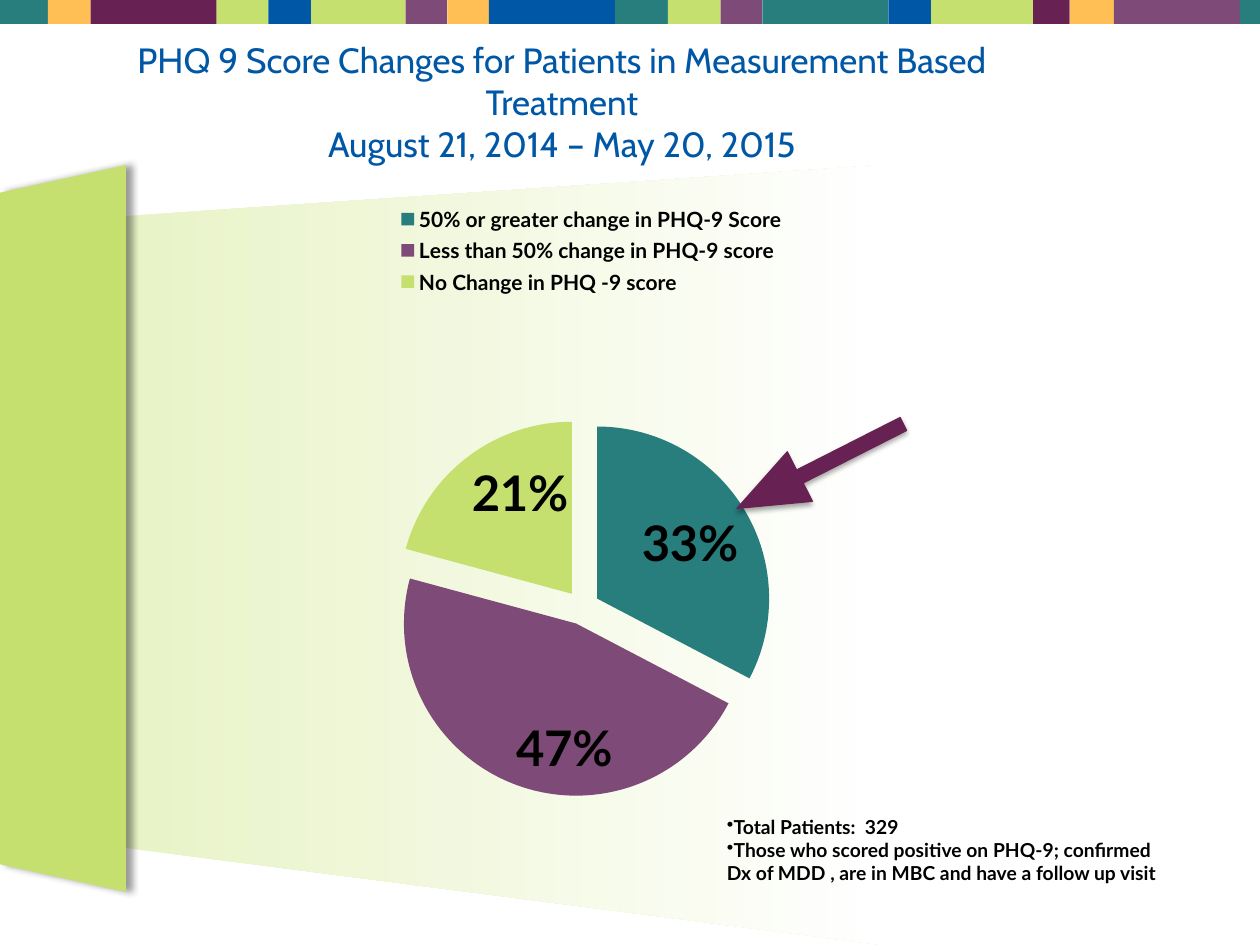
"""Build the PHQ 9 score change slide with its exploded pie chart."""
from lxml import etree
from pptx import Presentation
from pptx.chart.data import CategoryChartData
from pptx.dml.color import RGBColor
from pptx.enum.chart import XL_CHART_TYPE, XL_LABEL_POSITION, XL_LEGEND_POSITION
from pptx.enum.shapes import MSO_SHAPE
from pptx.enum.text import MSO_ANCHOR, MSO_AUTO_SIZE, PP_ALIGN
from pptx.oxml import parse_xml
from pptx.oxml.ns import nsdecls, qn
from pptx.util import Inches, Pt

PIE = XL_CHART_TYPE.PIE
INSIDE_END = XL_LABEL_POSITION.INSIDE_END
LEGEND_TOP = XL_LEGEND_POSITION.TOP
RECTANGLE, LEFT_ARROW = MSO_SHAPE.RECTANGLE, MSO_SHAPE.LEFT_ARROW
MIDDLE, CENTER = MSO_ANCHOR.MIDDLE, PP_ALIGN.CENTER
GROW = MSO_AUTO_SIZE.SHAPE_TO_FIT_TEXT

TEAL = RGBColor(0x28, 0x7D, 0x7D)
AMBER = RGBColor(0xFF, 0xBF, 0x55)
WINE = RGBColor(0x67, 0x21, 0x52)
LIME = RGBColor(0xC6, 0xE0, 0x70)
BLUE = RGBColor(0x00, 0x57, 0xA6)
PLUM = RGBColor(0x7E, 0x4A, 0x77)
PALE = RGBColor(0xE8, 0xF3, 0xC6)
WHITE = RGBColor(0xFF, 0xFF, 0xFF)
BLACK = RGBColor(0x00, 0x00, 0x00)

TITLE = ["PHQ 9 Score Changes for Patients in Measurement Based Treatment",
         "August 21, 2014 – May 20, 2015"]
NOTES = ["Total Patients:  329",
         "Those who scored positive on PHQ-9; confirmed Dx of MDD , "
         "are in MBC and have a follow up visit"]
SLICES = [("50% or greater change in PHQ-9 Score", 33, TEAL),
          ("Less than 50% change in PHQ-9 score", 47, PLUM),
          ("No Change in PHQ -9 score", 21, LIME)]
STRIP = [(-0.03, TEAL), (0.38, AMBER), (0.72, WINE), (1.72, LIME), (2.13, BLUE),
         (2.47, LIME), (3.22, PLUM), (3.55, AMBER), (3.88, BLUE), (4.88, TEAL),
         (5.3, LIME), (5.72, PLUM), (6.05, TEAL), (7.05, BLUE), (7.39, LIME),
         (8.2, WINE), (8.49, AMBER), (8.84, PLUM), (9.84, TEAL)]
STRIP_END = 10
BEAM = [(0.92, 1.72), (7, 1.31), (7, 7.5), (0.92, 6.72)]
PANEL = [(0, 1.53), (1, 1.31), (1, 7.08), (0, 6.86)]
PLOT_AREA = {"x": 0.21, "y": 0.21, "w": 0.41, "h": 0.8}
LEGEND_AREA = {"x": 0.21, "y": 0.03, "w": 0.43, "h": 0.14}

TITLE_FONT = {"name": "Cabin", "size": Pt(20)}
NOTE_FONT = {"name": "Lato", "size": Pt(11), "bold": True}
CHART_FONT = {"name": "Lato", "size": Pt(10)}
LEGEND_FONT = {"name": "Lato", "size": Pt(12), "bold": True}
LABEL_FONT = {"name": "Lato", "size": Pt(28), "bold": True}


def style(font, values, color):
    for name, value in values.items():
        setattr(font, name, value)
    font.color.rgb = color


def paint(shape, color):
    shape.shadow.inherit = False
    shape.fill.solid()
    shape.fill.fore_color.rgb = color
    shape.line.fill.background()


def cast_shadow(shape, alpha, blur, distance, angle):
    effects = shape.element.spPr.find(qn("a:effectLst"))
    effects.append(parse_xml(
        f'<a:outerShdw {nsdecls("a")} blurRad="{Pt(blur)}" dist="{Pt(distance)}" '
        f'dir="{angle * 60000}" algn="ctr" rotWithShape="0"><a:srgbClr val="000000">'
        f'<a:alpha val="{alpha * 1000}"/></a:srgbClr></a:outerShdw>'))


def add_outline(page, points):
    corners = [(Inches(x), Inches(y)) for x, y in points]
    builder = page.shapes.build_freeform(*corners[0])
    builder.add_line_segments(corners[1:], close=True)
    return builder.convert_to_shape()


def add_backdrop(page):
    beam = add_outline(page, BEAM)
    paint(beam, PALE)
    beam.fill.gradient()
    beam.fill.gradient_angle = 0
    for stop, color in zip(beam.fill.gradient_stops, (PALE, WHITE)):
        stop.color.rgb = color
    panel = add_outline(page, PANEL)
    paint(panel, LIME)
    cast_shadow(panel, 40, 4, 3, 0)
    strip = page.shapes.add_group_shape()
    ends = [left for left, _ in STRIP[1:]] + [STRIP_END]
    for (left, color), end in zip(STRIP, ends):
        block = strip.shapes.add_shape(RECTANGLE, Inches(left), Inches(-0.03),
                                       Inches(end - left), Inches(0.22))
        paint(block, color)


def add_title(page):
    box = page.shapes.add_textbox(Inches(0.5), Inches(0.3), Inches(7.92), Inches(1.01))
    frame = box.text_frame
    frame.word_wrap = True
    frame.vertical_anchor = MIDDLE
    para = frame.paragraphs[0]
    para.alignment = CENTER
    for index, line in enumerate(TITLE):
        if index:
            para.add_line_break()
        span = para.add_run()
        span.text = line
        style(span.font, TITLE_FONT, BLUE)


def place(parent, index, area):
    for old in parent.findall(qn("c:layout")):
        parent.remove(old)
    layout = etree.Element(qn("c:layout"))
    manual = etree.SubElement(layout, qn("c:manualLayout"))
    if parent.tag == qn("c:plotArea"):
        etree.SubElement(manual, qn("c:layoutTarget"), val="inner")
    for side in ("xMode", "yMode"):
        etree.SubElement(manual, qn(f"c:{side}"), val="edge")
    for key, value in area.items():
        etree.SubElement(manual, qn(f"c:{key}"), val=str(value))
    parent.insert(index, layout)


def add_pie(page):
    data = CategoryChartData()
    data.categories = [name for name, _, _ in SLICES]
    data.add_series("Series 1", [value for _, value, _ in SLICES])
    chart = page.shapes.add_chart(PIE, Inches(1.58), Inches(1.42),
                                  Inches(7.33), Inches(5.67), data).chart
    style(chart.font, CHART_FONT, BLACK)
    chart.has_title = False
    chart.has_legend = True
    chart.legend.position = LEGEND_TOP
    chart.legend.include_in_layout = False
    style(chart.legend.font, LEGEND_FONT, BLACK)
    plot = chart.plots[0]
    plot.vary_by_categories = True
    series = plot.series[0]
    for index, (_, _, color) in enumerate(SLICES):
        fill = series.points[index].format.fill
        fill.solid()
        fill.fore_color.rgb = color
    explosion = etree.Element(qn("c:explosion"), val="10")
    series._element.find(qn("c:dPt")).addprevious(explosion)
    labels = series.data_labels
    labels.show_value = False
    labels.show_percentage = True
    labels.number_format = "0%"
    labels.number_format_is_linked = False
    labels.position = INSIDE_END
    style(labels.font, LABEL_FONT, BLACK)
    place(chart._chartSpace.find(".//" + qn("c:plotArea")), 0, PLOT_AREA)
    place(chart._chartSpace.find(".//" + qn("c:legend")), 1, LEGEND_AREA)


def add_notes(page):
    box = page.shapes.add_textbox(Inches(5.67), Inches(6.42), Inches(3.67), Inches(0.66))
    frame = box.text_frame
    frame.word_wrap = True
    frame.auto_size = GROW
    for index, note in enumerate(NOTES):
        para = frame.add_paragraph() if index else frame.paragraphs[0]
        etree.SubElement(para._p.get_or_add_pPr(), qn("a:buChar"), char="•")
        span = para.add_run()
        span.text = note
        style(span.font, NOTE_FONT, BLACK)


def add_arrow(page):
    arrow = page.shapes.add_shape(LEFT_ARROW, Inches(5.77), Inches(3.48),
                                  Inches(1.48), Inches(0.44))
    arrow.rotation = 333.1
    arrow.adjustments[0], arrow.adjustments[1] = 0.26, 1.27
    paint(arrow, WINE)
    arrow.line.color.rgb = WINE
    arrow.line.width = Pt(0.75)
    cast_shadow(arrow, 35, 3.1, 1.8, 90)


def main():
    deck = Presentation()
    deck.slide_width, deck.slide_height = Inches(10), Inches(7.5)
    page = deck.slides.add_slide(deck.slide_layouts[6])
    for add_part in (add_backdrop, add_title, add_pie, add_notes, add_arrow):
        add_part(page)
    deck.save("out.pptx")


if __name__ == "__main__":
    main()
